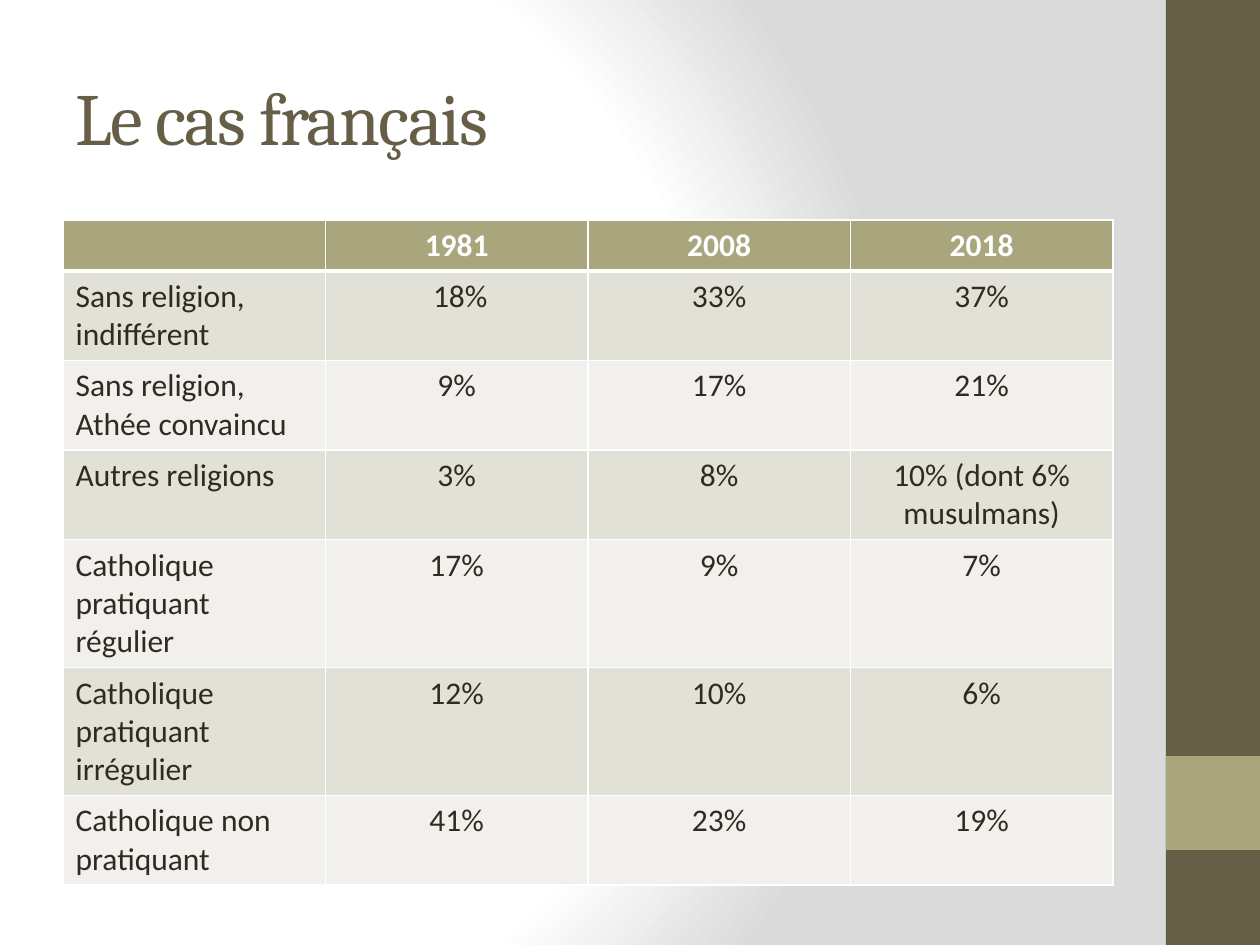
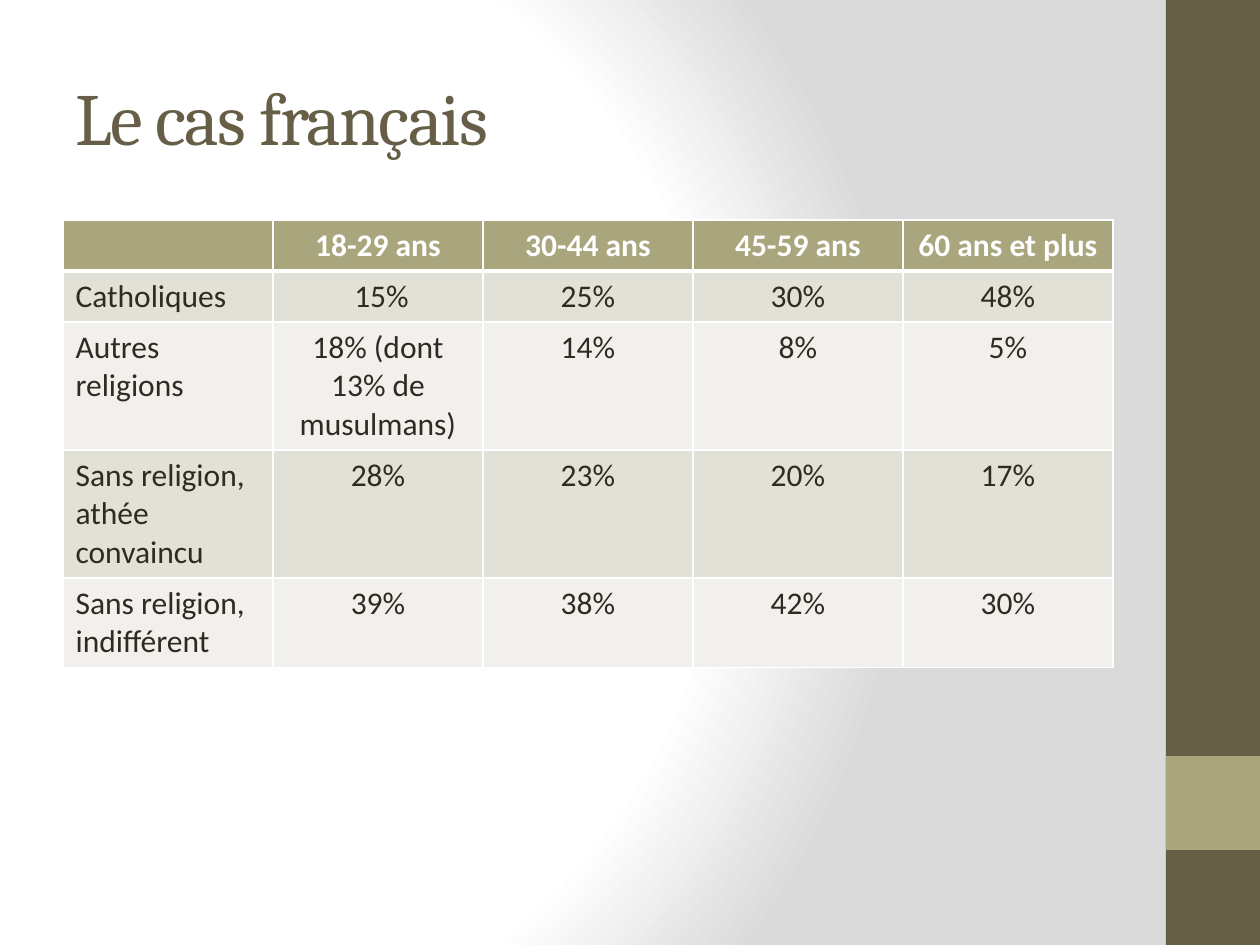
from lxml import etree
from pptx import Presentation
from pptx.dml.color import RGBColor
from pptx.enum.shapes import MSO_SHAPE
from pptx.enum.text import MSO_ANCHOR, MSO_AUTO_SIZE, PP_ALIGN
from pptx.oxml import parse_xml
from pptx.oxml.ns import nsdecls, qn
from pptx.util import Emu, Pt

PX_PER_INCH = 126
SLIDE_WIDTH, SLIDE_HEIGHT = 1260, 945
TITLE_ONLY = 5
TITLE_FONT, BODY_FONT = "Cambria", "Calibri"
WHITE, GREY = "FFFFFF", "DADADA"
BROWN, OLIVE, INK = "675E47", "A9A57C", "2F2B20"
ROW_FILLS = ("E2E1D7", "F1F0EC")
BAND_LEFT = 1166
TABLE_LEFT, TABLE_TOP, TABLE_WIDTH, ROW_HEIGHT = 63, 220, 1050, 51

TITLE = "Le cas français"
RELIGION_BY_YEAR = [
    ["", "1981", "2008", "2018"],
    ["Sans religion, indifférent", " 18%", "33%", "37%"],
    ["Sans religion, Athée convaincu", "9%", "17%", "21%"],
    ["Autres religions", "3%", "8%", "10% (dont 6% musulmans)"],
    ["Catholique pratiquant régulier", "17%", "9%", "7%"],
    ["Catholique pratiquant irrégulier", "12%", "10%", "6%"],
    ["Catholique non pratiquant", "41%", "23%", "19%"],
]
RELIGION_BY_AGE = [
    ["", "18-29 ans", "30-44 ans", "45-59 ans", "60 ans et plus"],
    ["Catholiques", " 15%", "25%", "30%", "48%"],
    ["Autres religions", "18% (dont 13% de musulmans)", "14%", "8%", "5%"],
    ["Sans religion, athée convaincu", "28%", "23%", "20%", "17%"],
    ["Sans religion, indifférent", "39%", "38%", "42%", "30%"],
]


def px(length):
    return Emu(round(length * 914400 / PX_PER_INCH))


def color(hex_text):
    return RGBColor.from_string(hex_text)


def fill_with(target, hex_text):
    target.fill.solid()
    target.fill.fore_color.rgb = color(hex_text)


def write(frame, text, *, font, size, ink, bold=False, align=PP_ALIGN.LEFT, spacing=0):
    """Put one formatted paragraph in a text frame; spacing is in points."""
    para = frame.paragraphs[0]
    para.alignment = align
    span = para.add_run()
    span.text = text
    span.font.name = font
    span.font.size = Pt(size)
    span.font.bold = bold
    span.font.color.rgb = color(ink)
    if spacing:
        span._r.get_or_add_rPr().set("spc", str(spacing * 100))


def set_background(master):
    """Give the master a round gradient from white at the left to grey."""
    master.background.fill.solid()
    properties = master.element.find(".//" + qn("p:bgPr"))
    stops = "".join(
        f'<a:gs pos="{percent * 1000}"><a:srgbClr val="{shade}"/></a:gs>'
        for percent, shade in ((0, WHITE), (75, WHITE), (100, GREY)))
    gradient = parse_xml(
        f'<a:gradFill {nsdecls("a")} rotWithShape="1"><a:gsLst>{stops}</a:gsLst>'
        '<a:path path="circle"><a:fillToRect l="20000" t="50000" r="100000" b="50000"/>'
        '</a:path></a:gradFill>')
    properties.replace(properties.find(qn("a:solidFill")), gradient)


def add_band(page, top, height, hex_text):
    """Add a block of the column along the right edge."""
    band = page.shapes.add_shape(MSO_SHAPE.RECTANGLE, px(BAND_LEFT), px(top),
                                 px(SLIDE_WIDTH - BAND_LEFT), px(height))
    band.shadow.inherit = False
    band.line.fill.background()
    fill_with(band, hex_text)


def set_title(page, text):
    title = page.shapes.title
    title.left, title.top, title.width, title.height = map(px, (63, 38, 1050, 157))
    frame = title.text_frame
    frame.word_wrap = True
    frame.auto_size = MSO_AUTO_SIZE.NONE
    frame.vertical_anchor = MSO_ANCHOR.MIDDLE
    write(frame, text, font=TITLE_FONT, size=42, ink=BROWN, spacing=-1)


def set_borders(cell, **widths):
    """Draw white borders; each keyword is a side (L, R, T, B) and its points."""
    properties = cell._tc.get_or_add_tcPr()
    for side, width in widths.items():
        line = etree.SubElement(properties, qn(f"a:ln{side}"), w=str(Pt(width)))
        solid = etree.SubElement(line, qn("a:solidFill"))
        etree.SubElement(solid, qn("a:srgbClr"), val=WHITE)


def add_data_table(page, rows):
    column_count = len(rows[0])
    table = page.shapes.add_table(
        len(rows), column_count, px(TABLE_LEFT), px(TABLE_TOP),
        px(TABLE_WIDTH), px(ROW_HEIGHT * len(rows))).table
    for column in table.columns:
        column.width = px(TABLE_WIDTH) // column_count
    for row_index, texts in enumerate(rows):
        is_header = row_index == 0
        table.rows[row_index].height = px(ROW_HEIGHT)
        for column_index, text in enumerate(texts):
            cell = table.cell(row_index, column_index)
            set_borders(cell, L=1, R=1, T=3 if row_index == 1 else 1,
                        B=3 if is_header else 1)
            fill_with(cell, OLIVE if is_header else ROW_FILLS[(row_index - 1) % 2])
            if text:
                write(cell.text_frame, text, font=BODY_FONT, size=18,
                      ink=WHITE if is_header else INK, bold=is_header,
                      align=PP_ALIGN.CENTER if column_index else PP_ALIGN.LEFT)


def add_page(deck, rows):
    page = deck.slides.add_slide(deck.slide_layouts[TITLE_ONLY])
    add_band(page, 0, SLIDE_HEIGHT, BROWN)
    add_band(page, 756, 94, OLIVE)
    set_title(page, TITLE)
    add_data_table(page, rows)


def main():
    deck = Presentation()
    deck.slide_width, deck.slide_height = px(SLIDE_WIDTH), px(SLIDE_HEIGHT)
    set_background(deck.slide_master)
    for rows in (RELIGION_BY_YEAR, RELIGION_BY_AGE):
        add_page(deck, rows)
    deck.save("out.pptx")


if __name__ == "__main__":
    main()
